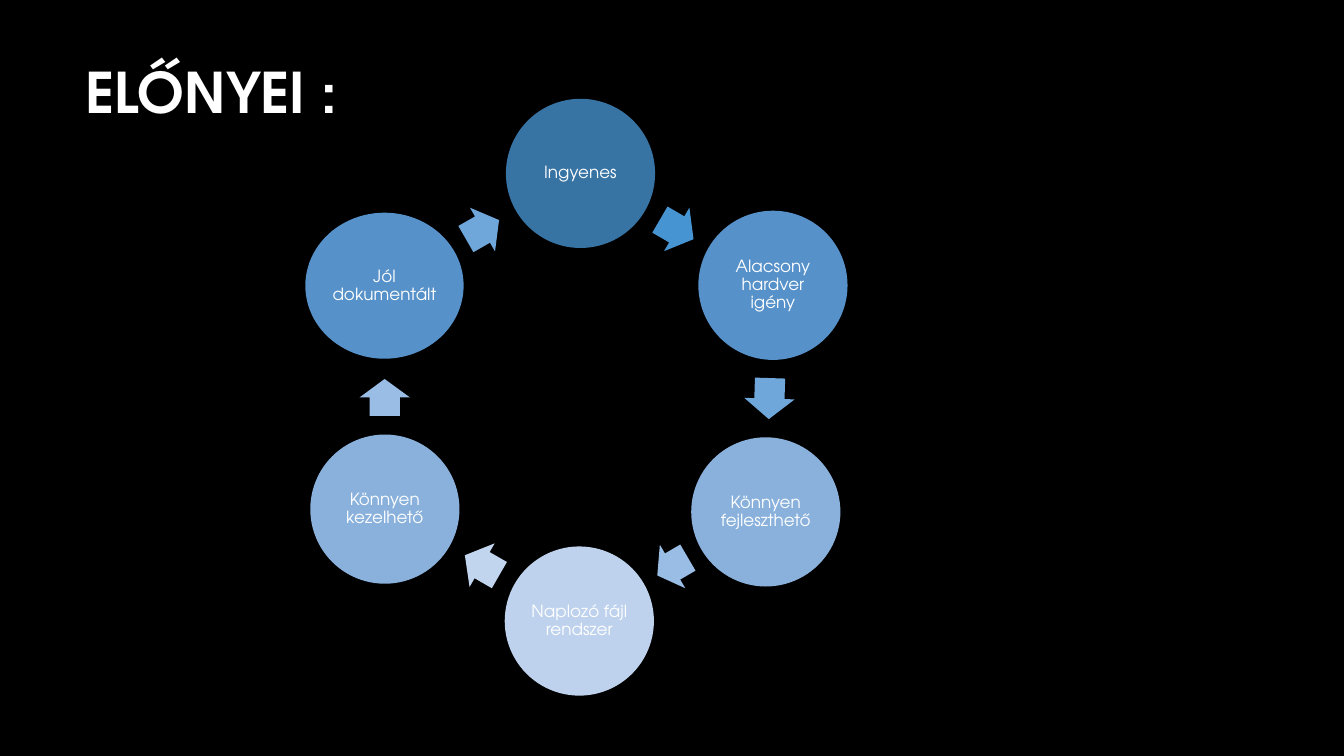
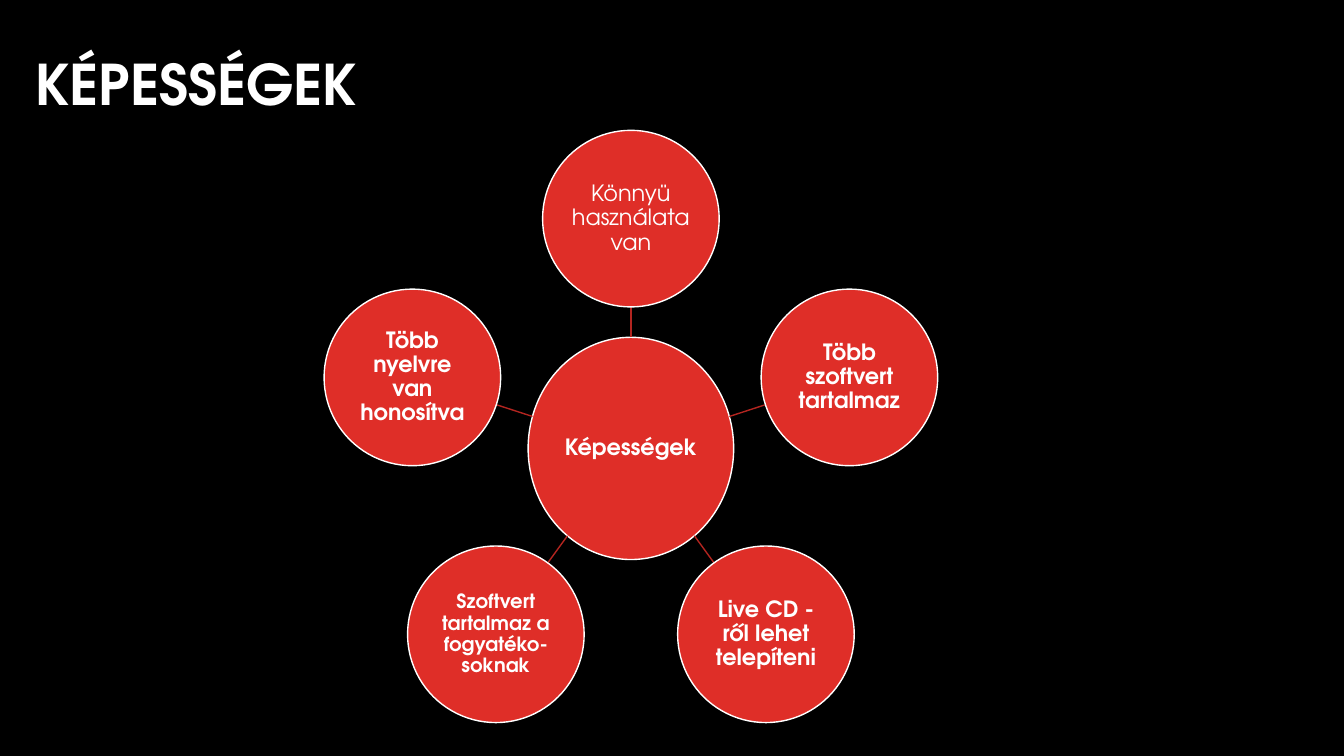
"""Build two dark slides: a cycle of advantages and a radial diagram of abilities."""
import math

import lxml.etree
import pptx
import pptx.dml.color
import pptx.enum.shapes
import pptx.enum.text
import pptx.oxml.ns
import pptx.util

Cm = pptx.util.Cm
Pt = pptx.util.Pt
SHAPE = pptx.enum.shapes.MSO_SHAPE
FONT = "TeX Gyre Adventor"
BLACK, WHITE = "000000", "FFFFFF"
RED, DARK_RED = "DF2E28", "B32520"

CIRCLE = 3.76
ARROW_HEIGHT = 1.27
ARROW_SHARE = 0.53
ADVANTAGES = [
    ("Ingyenes", 14.63, 4.37, CIRCLE, CIRCLE, "3773A3", "4794D2"),
    ("Alacsony hardver igény", 19.48, 7.19, CIRCLE, CIRCLE, "5691C9", "70A7DB"),
    ("Könnyen fejleszthető", 19.3, 12.9, CIRCLE, CIRCLE, "89B1DC", "99BDE5"),
    ("Naplozó fájl rendszer", 14.6, 15.65, CIRCLE, CIRCLE, "BED2ED", "C2D5EF"),
    ("Könnyen kezelhető", 9.7, 12.83, CIRCLE, CIRCLE, "89B1DC", "99BDE5"),
    ("Jól dokumentált", 9.69, 7.2, 3.99, 3.68, "5691C9", "70A7DB"),
]

HUB_X, HUB_Y = 15.9, 11.3
HUB_W, HUB_H = 5.18, 5.6
RING = 5.79
SATELLITE = 4.45
ABILITIES = [
    ("Könnyü használata van", 16, False),
    ("Több szoftvert tartalmaz", 16, True),
    ("Live CD - ről lehet telepíteni", 16, True),
    ("Szoftvert tartalmaz a fogyatéko-soknak", 14, True),
    ("Több nyelvre van honosítva", 16, True),
]


def rgb(value):
    return pptx.dml.color.RGBColor.from_string(value)


def style(p, size, bold):
    p.line_spacing = 0.9
    p.font.name = FONT
    p.font.size = Pt(size)
    p.font.bold = bold
    p.font.color.rgb = rgb(WHITE)


def add_slide(prs, title, left, top):
    s = prs.slides.add_slide(prs.slide_layouts[6])
    tf = s.shapes.add_textbox(Cm(left), Cm(top), Cm(23.93), Cm(3.58)).text_frame
    tf.word_wrap = True
    tf.vertical_anchor = pptx.enum.text.MSO_ANCHOR.MIDDLE
    tf.text = title
    style(tf.paragraphs[0], 40, True)
    return s


def add_centred(s, kind, x, y, w, h, fill, line=None):
    sp = s.shapes.add_shape(kind, Cm(x - w / 2), Cm(y - h / 2), Cm(w), Cm(h))
    sp.shadow.inherit = False
    sp.fill.solid()
    sp.fill.fore_color.rgb = rgb(fill)
    if line:
        sp.line.color.rgb = rgb(line)
        sp.line.width = Pt(1)
    else:
        sp.line.fill.background()
    return sp


def add_bubble(s, text, x, y, w, h, fill, size, bold=False, line=None, inset=0.04):
    tf = add_centred(s, SHAPE.OVAL, x, y, w, h, fill, line).text_frame
    tf.word_wrap = True
    tf.vertical_anchor = pptx.enum.text.MSO_ANCHOR.MIDDLE
    tf.margin_left = tf.margin_right = tf.margin_top = tf.margin_bottom = Cm(inset)
    tf.text = text
    p = tf.paragraphs[0]
    p.alignment = pptx.enum.text.PP_ALIGN.CENTER
    style(p, size, bold)


def add_cycle_arrow(s, start, end, fill):
    _, x1, y1, w1, *_ = start
    _, x2, y2, w2, *_ = end
    gap = math.dist((x1, y1), (x2, y2)) - (w1 + w2) / 2
    sp = add_centred(s, SHAPE.RIGHT_ARROW, (x1 + x2) / 2, (y1 + y2) / 2,
                     ARROW_SHARE * gap, ARROW_HEIGHT, fill)
    sp.adjustments[0] = 0.6
    sp.adjustments[1] = 0.5
    sp.rotation = math.degrees(math.atan2(y2 - y1, x2 - x1)) % 360


def add_spoke(s, dx, dy):
    near = 1 / math.hypot(dx / (HUB_W / 2), dy / (HUB_H / 2))
    far = RING - SATELLITE / 2
    cxn = s.shapes.add_connector(
        pptx.enum.shapes.MSO_CONNECTOR.STRAIGHT,
        Cm(HUB_X + near * dx), Cm(HUB_Y + near * dy),
        Cm(HUB_X + far * dx), Cm(HUB_Y + far * dy))
    cxn.line.color.rgb = rgb(DARK_RED)
    cxn.line.width = Pt(1)
    sp_pr = cxn._element.find(pptx.oxml.ns.qn("p:spPr"))
    lxml.etree.SubElement(sp_pr, pptx.oxml.ns.qn("a:effectLst"))


def build_advantages(prs):
    s = add_slide(prs, "ELŐNYEI :", 1.9, 0.61)
    for i, item in enumerate(ADVANTAGES):
        text, x, y, w, h, fill, arrow_fill = item
        add_bubble(s, text, x, y, w, h, fill, 12)
        add_cycle_arrow(s, item, ADVANTAGES[(i + 1) % len(ADVANTAGES)], arrow_fill)


def build_abilities(prs):
    s = add_slide(prs, "KÉPESSÉGEK", 0.64, 0.41)
    add_bubble(s, "Képességek", HUB_X, HUB_Y, HUB_W, HUB_H, RED, 16, True, WHITE, 0.03)
    for i, (text, size, bold) in enumerate(ABILITIES):
        angle = math.tau * i / len(ABILITIES)
        dx, dy = math.sin(angle), -math.cos(angle)
        add_spoke(s, dx, dy)
        add_bubble(s, text, HUB_X + RING * dx, HUB_Y + RING * dy,
                   SATELLITE, SATELLITE, RED, size, bold, WHITE, 0.03)


def main():
    prs = pptx.Presentation()
    prs.slide_width, prs.slide_height = Cm(33.87), Cm(19.05)
    background = prs.slide_master.background.fill
    background.solid()
    background.fore_color.rgb = rgb(BLACK)
    build_advantages(prs)
    build_abilities(prs)
    prs.save("out.pptx")


if __name__ == "__main__":
    main()
